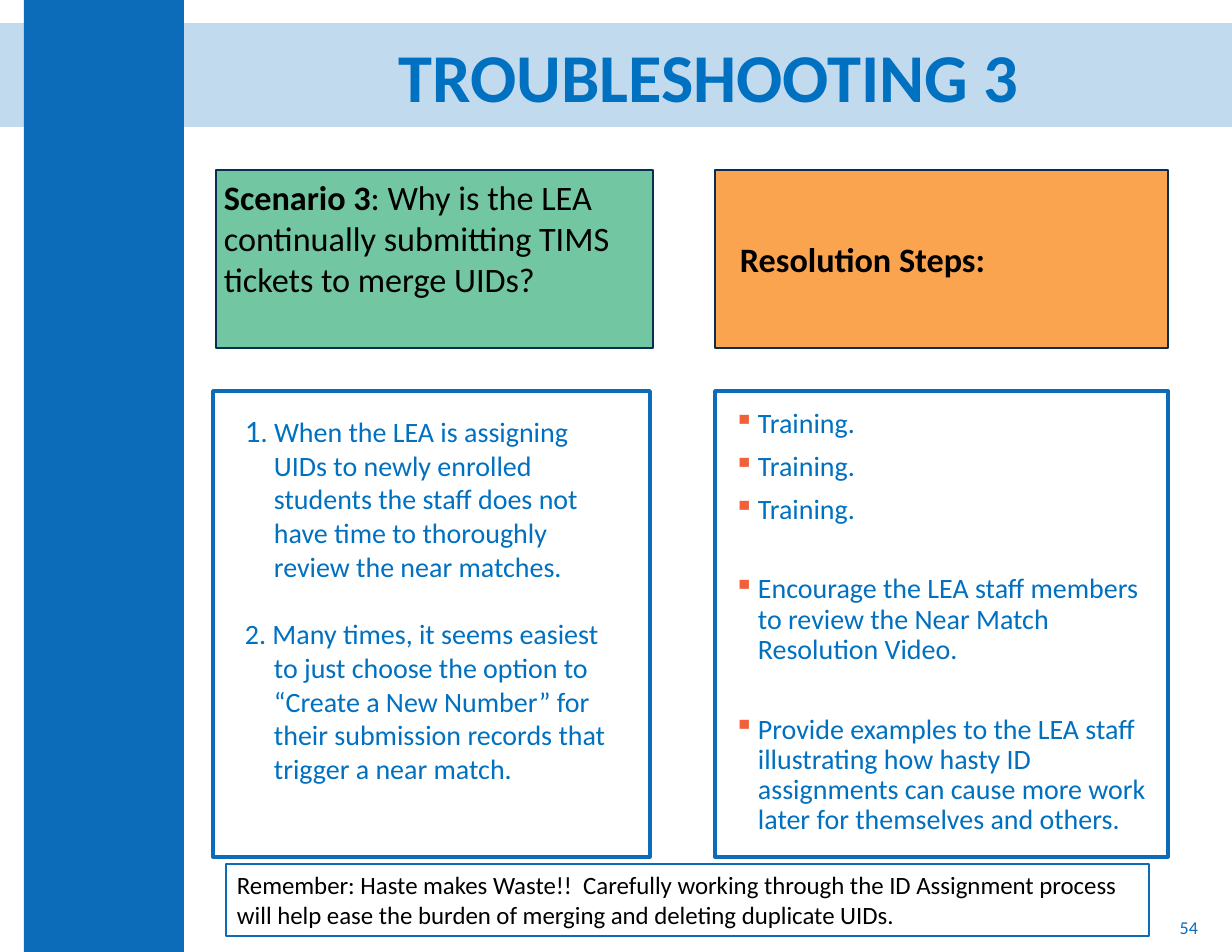
from lxml import etree
from pptx import Presentation
from pptx import util as u
from pptx.dml.color import RGBColor
from pptx.enum import shapes, text
from pptx.oxml import ns

SCALE = 914400 / 112
BLUE = "0D6CB9"
TEXT_BLUE = "0070C0"
NAVY = "062F51"
BLACK = "000000"
BULLET_RED = "F16038"
LEFT, RIGHT = text.PP_ALIGN.LEFT, text.PP_ALIGN.RIGHT
CENTER = text.PP_ALIGN.CENTER
TOP, MIDDLE = text.MSO_ANCHOR.TOP, text.MSO_ANCHOR.MIDDLE

CAUSES = [
    [("1", 20, False),
     (". When the LEA is assigning UIDs to newly enrolled students the staff "
      "does not have time to thoroughly review the near matches.", 18, False)],
    [("2. Many times, it seems easiest to just choose the option to “Create a "
      "New Number” for their submission records that trigger a near match.",
      18, False)],
]
STEPS = [
    ("Training.", 0),
    ("Training.", 8.2),
    ("Training.", 8.2),
    ("Encourage the LEA staff members to review the Near Match Resolution "
     "Video.", 31.8),
    ("Provide examples to the LEA staff illustrating how hasty ID assignments "
     "can cause more work later for themselves and others.", 31.8),
]
REMINDER = ("Remember: Haste makes Waste!!  Carefully working through the ID "
            "Assignment process will help ease the burden of merging and "
            "deleting duplicate UIDs.")


def px(value):
    return u.Emu(round(value * SCALE))


def color(value):
    return RGBColor.from_string(value)


def add_box(slide, box, fill=None, line=None, width=1, alpha=None):
    shape = slide.shapes.add_shape(
        shapes.MSO_SHAPE.RECTANGLE, *map(px, box))
    shape.shadow.inherit = False
    if fill:
        shape.fill.solid()
        shape.fill.fore_color.rgb = color(fill)
    else:
        shape.fill.background()
    if alpha:
        element = shape.fill._xPr.find(".//" + ns.qn("a:srgbClr"))
        etree.SubElement(element, ns.qn("a:alpha"), val=str(alpha * 1000))
    if line:
        shape.line.color.rgb = color(line)
        shape.line.width = u.Pt(width)
    else:
        shape.line.fill.background()
    return shape


def add_text_box(slide, box):
    return slide.shapes.add_textbox(*map(px, box))


def set_frame(shape, anchor=TOP, insets=(11, 6, 11, 6)):
    frame = shape.text_frame
    frame.word_wrap = True
    frame.vertical_anchor = anchor
    (frame.margin_left, frame.margin_top,
     frame.margin_right, frame.margin_bottom) = map(px, insets)
    return frame


def add_paragraph(frame, index):
    return frame.add_paragraph() if index else frame.paragraphs[0]


def set_indent(paragraph, indent):
    properties = paragraph._p.get_or_add_pPr()
    properties.set("marL", str(px(indent)))
    properties.set("indent", str(-px(indent)))
    return properties


def set_bullet(paragraph, indent):
    properties = set_indent(paragraph, indent)
    bullet_color = etree.SubElement(properties, ns.qn("a:buClr"))
    etree.SubElement(bullet_color, ns.qn("a:srgbClr"), val=BULLET_RED)
    etree.SubElement(properties, ns.qn("a:buChar"), char="▪")


def style(paragraph, size, font_color, bold=False, align=LEFT):
    paragraph.alignment = align
    font = paragraph.font
    font.name = "Calibri"
    font.size = u.Pt(size)
    font.bold = bold
    font.color.rgb = color(font_color)


def write_line(shape, words, size, font_color, bold=False, align=LEFT,
               anchor=TOP, insets=(11, 6, 11, 6)):
    paragraph = set_frame(shape, anchor, insets).paragraphs[0]
    paragraph.text = words
    style(paragraph, size, font_color, bold, align)


def write_runs(paragraph, runs, font_color):
    style(paragraph, runs[-1][1], font_color)
    for words, size, bold in runs:
        run = paragraph.add_run()
        run.text = words
        run.font.size = u.Pt(size)
        run.font.bold = bold


def add_causes(slide, box):
    frame = set_frame(add_text_box(slide, box))
    for index, runs in enumerate(CAUSES):
        paragraph = add_paragraph(frame, index)
        set_indent(paragraph, 29)
        paragraph.space_before = u.Pt(22 if index else 0)
        write_runs(paragraph, runs, TEXT_BLUE)


def add_steps(slide, box):
    frame = set_frame(add_text_box(slide, box), insets=(9, 4, 9, 4))
    for index, (words, gap) in enumerate(STEPS):
        paragraph = add_paragraph(frame, index)
        paragraph.text = words
        set_bullet(paragraph, 24)
        paragraph.line_spacing = 0.9
        paragraph.space_before = u.Pt(gap)
        style(paragraph, 18, TEXT_BLUE)


def main():
    presentation = Presentation()
    presentation.slide_width, presentation.slide_height = px(1232), px(952)
    slide = presentation.slides.add_slide(presentation.slide_layouts[6])

    add_box(slide, (0, 23, 1232, 104), fill=BLUE, alpha=25)
    add_box(slide, (24, 0, 160, 952), fill=BLUE)
    write_line(add_text_box(slide, (931, 902, 278, 50)), "54", 11.6, BLUE,
               align=RIGHT, anchor=MIDDLE)
    write_line(add_text_box(slide, (222, 23, 974, 104)), "TROUBLESHOOTING 3",
               44, TEXT_BLUE, bold=True, align=CENTER, anchor=MIDDLE)

    add_box(slide, (216, 170, 437, 178), fill="72C6A2", line=NAVY)
    scenario = set_frame(add_text_box(slide, (213, 170, 431, 136)))
    write_runs(scenario.paragraphs[0], [
        ("Scenario 3", 22, True),
        (": Why is the LEA continually submitting TIMS tickets to merge UIDs?",
         22, False)], BLACK)
    resolution = add_box(slide, (715, 170, 453, 178), fill="FAA450", line=NAVY)
    write_line(resolution, "Resolution Steps:", 22, BLACK, bold=True,
               anchor=MIDDLE, insets=(25, 6, 11, 6))

    add_box(slide, (213, 391, 437, 466), line=BLUE, width=2.25)
    add_causes(slide, (234, 405, 395, 389))
    add_box(slide, (715, 391, 453, 466), line=BLUE, width=2.25)
    add_steps(slide, (725, 405, 433, 395))

    reminder = add_box(slide, (226, 864, 923, 72), line=BLUE, width=1.5)
    write_line(reminder, REMINDER, 16, BLACK)

    presentation.save("out.pptx")


if __name__ == "__main__":
    main()
